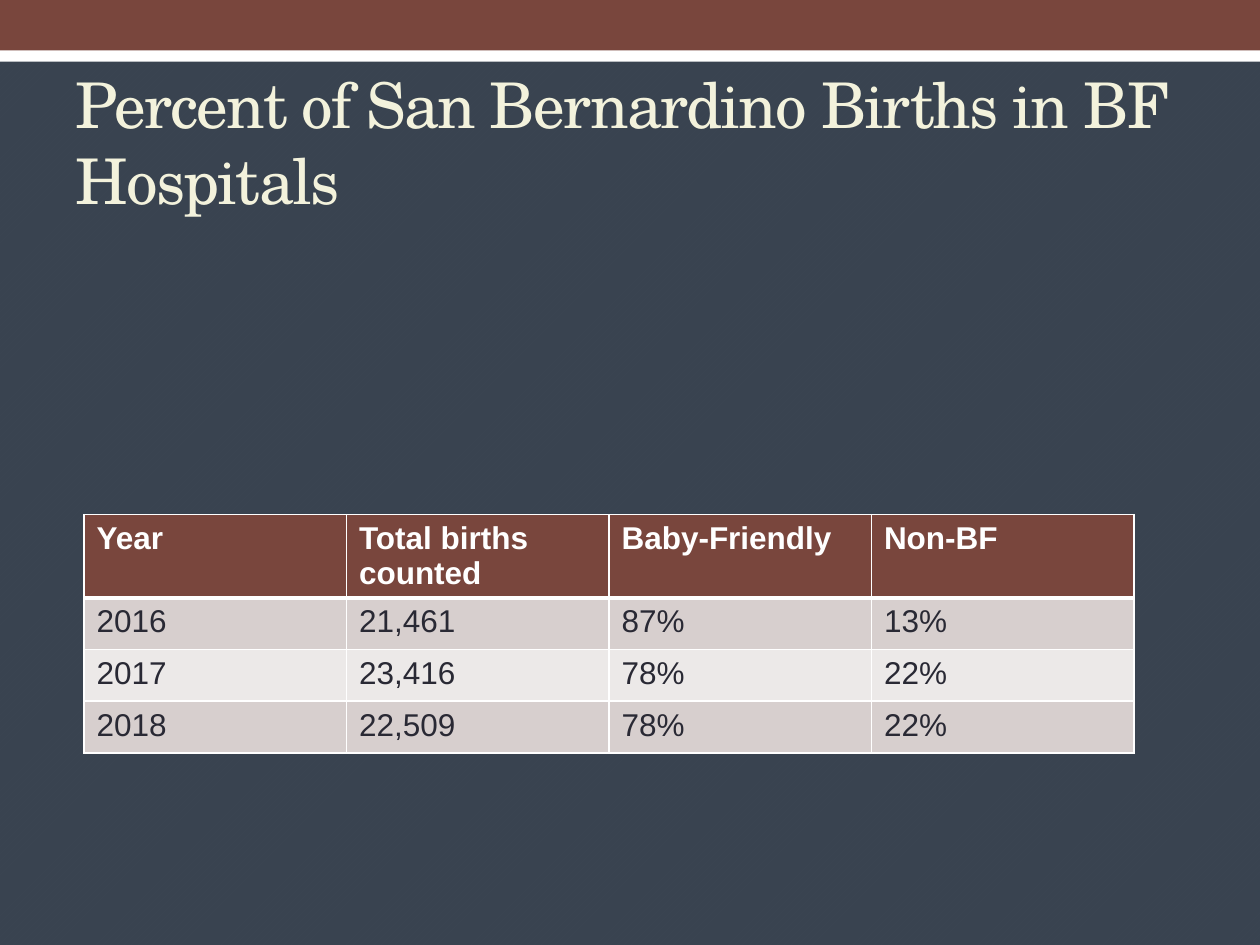
"""Build the slide on births in Baby-Friendly hospitals."""
import dataclasses
import typing

import lxml.etree
import pptx
import pptx.dml.color
import pptx.enum.dml
import pptx.enum.shapes
import pptx.enum.text
import pptx.oxml.ns
import pptx.util


@dataclasses.dataclass(frozen=True)
class Theme:
    ground: str = "394350"
    stripe: str = "3D4754"
    brown: str = "79463D"
    white: str = "FFFFFF"
    cream: str = "F3F2DC"
    ink: str = "292934"
    bands: tuple = ("D7CFCE", "ECE9E8")
    serif: str = "TeX Gyre Schola"
    sans: str = "Arial"
    large: int = 36
    small: int = 18
    thin: int = 1
    thick: int = 3


class Box(typing.NamedTuple):
    left: float
    top: float
    width: float
    height: float


class Bar(typing.NamedTuple):
    box: Box
    fill: str


THEME = Theme()
WIDE = pptx.util.Inches(10)
HIGH = pptx.util.Inches(7.5)
LINE = HIGH / 750
UNIT = WIDE / 1000
BARS = (
    Bar(Box(0, 24, 1000, 25), THEME.white),
    Bar(Box(0, 0, 1000, 40), THEME.brown),
)
TITLE = Box(50, 58, 900, 108)
GRID = Box(66.7, 408.5, 833.3, 188)
HEAD = 65
ROWS = (
    ("Year", "Total births counted", "Baby-Friendly", "Non-BF"),
    ("2016", "21,461", "87%", "13%"),
    ("2017", "23,416", "78%", "22%"),
    ("2018", "22,509", "78%", "22%"),
)


def place(box: Box) -> tuple:
    return (
        round(box.left * UNIT), round(box.top * LINE),
        round(box.width * UNIT), round(box.height * LINE),
    )


def tint(code: str) -> pptx.dml.color.RGBColor:
    return pptx.dml.color.RGBColor.from_string(code)


def paint(fill, code: str) -> None:
    fill.solid()
    fill.fore_color.rgb = tint(code)


def write(frame, text: str, face: str, size: int, code: str, bold: bool = False):
    run = frame.paragraphs[0].add_run()
    run.text = text
    run.font.name = face
    run.font.size = pptx.util.Pt(size)
    run.font.bold = bold
    run.font.color.rgb = tint(code)
    return run


def draw_ground(slide) -> None:
    fill = slide.background.fill
    fill.patterned()
    fill.pattern = pptx.enum.dml.MSO_PATTERN.WIDE_UPWARD_DIAGONAL
    fill.fore_color.rgb = tint(THEME.stripe)
    fill.back_color.rgb = tint(THEME.ground)


def draw_bar(slide, bar: Bar) -> None:
    kind = pptx.enum.shapes.MSO_SHAPE.RECTANGLE
    shape = slide.shapes.add_shape(kind, *place(bar.box))
    shape.shadow.inherit = False
    shape.line.fill.background()
    paint(shape.fill, bar.fill)


def draw_title(slide, text: str) -> None:
    title = slide.shapes.title
    title.left, title.top, title.width, title.height = place(TITLE)
    frame = title.text_frame
    frame.word_wrap = True
    frame.auto_size = pptx.enum.text.MSO_AUTO_SIZE.NONE
    frame.vertical_anchor = pptx.enum.text.MSO_ANCHOR.MIDDLE
    frame.paragraphs[0].alignment = pptx.enum.text.PP_ALIGN.LEFT
    run = write(frame, text, THEME.serif, THEME.large, THEME.cream)
    run.font._element.set("spc", "-100")


def edge(cell, side: str, width: int) -> None:
    name = pptx.oxml.ns.qn
    props = cell._tc.get_or_add_tcPr()
    line = lxml.etree.SubElement(props, name(f"a:ln{side}"), w=str(pptx.util.Pt(width)))
    fill = lxml.etree.SubElement(line, name("a:solidFill"))
    lxml.etree.SubElement(fill, name("a:srgbClr"), val=THEME.white)


def draw_cell(cell, text: str, row: int) -> None:
    head = row == 0
    for side in "LRTB":
        bold = (row, side) in ((0, "B"), (1, "T"))
        edge(cell, side, THEME.thick if bold else THEME.thin)
    paint(cell.fill, THEME.brown if head else THEME.bands[(row - 1) % 2])
    code = THEME.white if head else THEME.ink
    write(cell.text_frame, text, THEME.sans, THEME.small, code, head)


def draw_table(slide) -> None:
    table = slide.shapes.add_table(len(ROWS), len(ROWS[0]), *place(GRID)).table
    step = (GRID.height - HEAD) / (len(ROWS) - 1)
    for row, texts in enumerate(ROWS):
        table.rows[row].height = round((step if row else HEAD) * LINE)
        for col, text in enumerate(texts):
            draw_cell(table.cell(row, col), text, row)


def main() -> None:
    deck = pptx.Presentation()
    deck.slide_width, deck.slide_height = WIDE, HIGH
    slide = deck.slides.add_slide(deck.slide_layouts.get_by_name("Title Only"))
    draw_ground(slide)
    for bar in BARS:
        draw_bar(slide, bar)
    draw_title(slide, "Percent of San Bernardino Births in BF Hospitals")
    draw_table(slide)
    deck.save("out.pptx")


if __name__ == "__main__":
    main()
